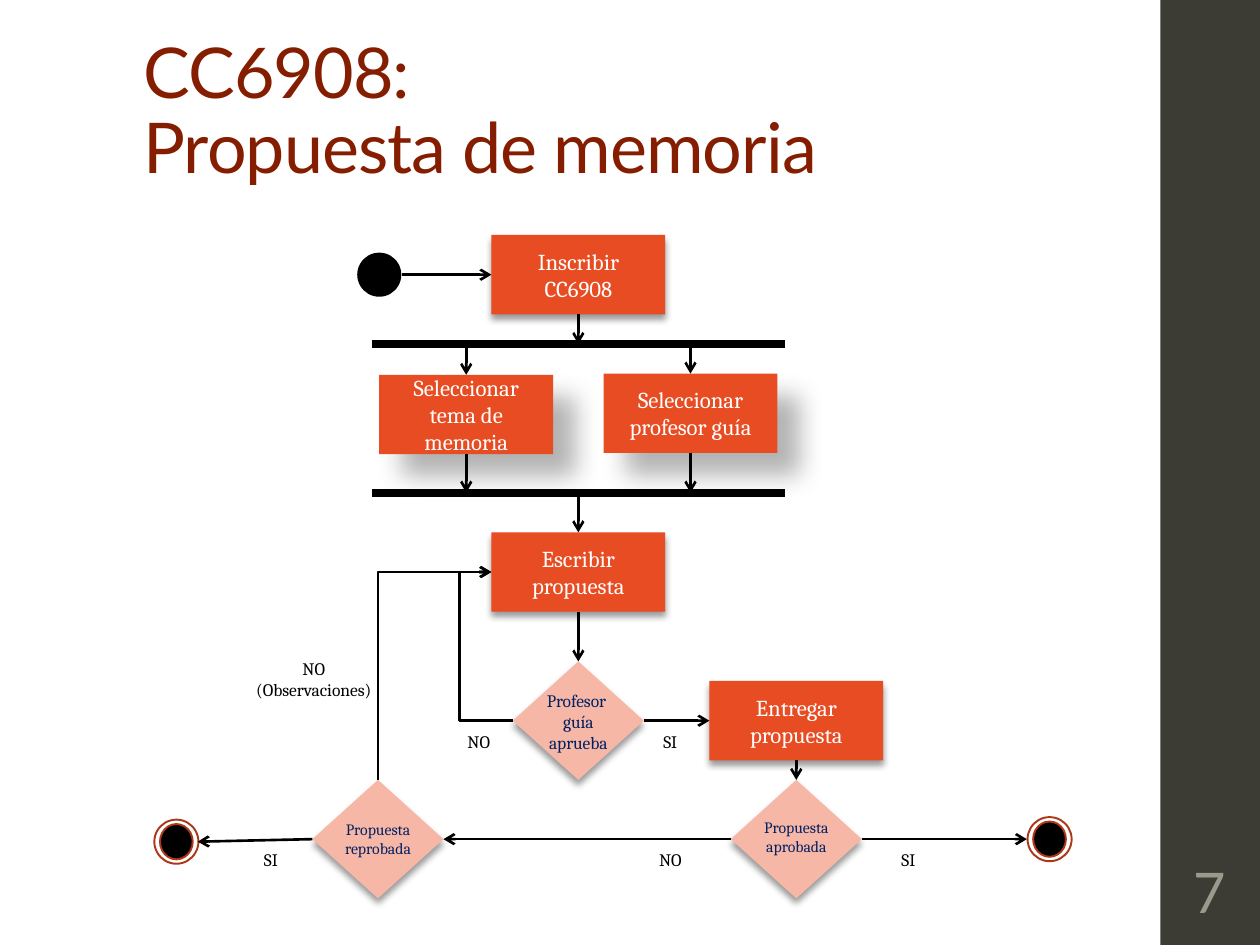
import pptx
import pptx.util
import pptx.dml.color
import pptx.enum.shapes
import pptx.enum.text
import pptx.oxml
import pptx.oxml.ns
from lxml import etree

Inches = pptx.util.Inches
Pt = pptx.util.Pt
qn = pptx.oxml.ns.qn
Kind = pptx.enum.shapes.MSO_SHAPE
Link = pptx.enum.shapes.MSO_CONNECTOR
Fit = pptx.enum.text.MSO_AUTO_SIZE
Mid = pptx.enum.text.MSO_ANCHOR.MIDDLE
Low = pptx.enum.text.MSO_ANCHOR.BOTTOM
Center = pptx.enum.text.PP_ALIGN.CENTER
Left = pptx.enum.text.PP_ALIGN.LEFT

COLORS = {
    "side": "3C3C34", "title": "851D00", "page": "9A9A8C",
    "task": "E84C22", "choice": "F6B7A7", "navy": "002060",
    "ring": "AC3819", "black": "000000", "white": "FFFFFF",
}
NEAR = (40, 4, 3, 90)
FAR = (30, 15, 18, 45)
TASK = (1.38, 0.63)
CHOICE = (1.04, 0.94)


def tint(name):
    return pptx.dml.color.RGBColor.from_string(COLORS[name])


def apply(item, values):
    for key, value in values.items():
        setattr(item, key, value)


def write(shape, text, size, color, font="Cambria", align=Center, frame=None, para=None):
    body = shape.text_frame
    apply(body, {"word_wrap": True, **(frame or {})})
    for num, line in enumerate(text if isinstance(text, list) else [text]):
        row = body.paragraphs[0] if num == 0 else body.add_paragraph()
        row.text = line
        apply(row, {"alignment": align, **(para or {})})
        for run in row.runs:
            apply(run.font, {"size": Pt(size), "name": font})
            run.font.color.rgb = tint(color)


def label(shapes, box, text, size, color="black", **style):
    area = shapes.add_textbox(*map(Inches, box))
    write(area, text, size, color, **{"frame": {"auto_size": Fit.SHAPE_TO_FIT_TEXT}, **style})
    return area


def shade(shape, cast):
    alpha, blur, dist, angle = cast
    effects = shape._element.spPr.find(qn("a:effectLst"))
    outer = etree.SubElement(
        effects, qn("a:outerShdw"), blurRad=str(Pt(blur)), dist=str(Pt(dist)),
        dir=str(angle * 60000), algn="ctr", rotWithShape="0")
    color = etree.SubElement(outer, qn("a:srgbClr"), val=COLORS["black"])
    etree.SubElement(color, qn("a:alpha"), val=str(alpha * 1000))


def draw(shapes, kind, box, fill, edge=None, cast=None):
    shape = shapes.add_shape(kind, *map(Inches, box))
    shape.shadow.inherit = False
    shape.fill.solid()
    shape.fill.fore_color.rgb = tint(fill)
    if edge:
        shape.line.color.rgb = tint(edge)
        shape.line.width = Pt(1.1)
    else:
        shape.line.fill.background()
    if cast:
        shade(shape, cast)
    return shape


def link(shapes, start, end, width=1.5, head=True, kind=Link.STRAIGHT):
    line = shapes.add_connector(kind, *map(Inches, (*start, *end)))
    line.line.color.rgb = tint("black")
    line.line.width = Pt(width)
    if head:
        etree.SubElement(line.line._get_or_add_ln(), qn("a:tailEnd"), type="arrow")
    etree.SubElement(line._element.spPr, qn("a:effectLst"))
    return line


def around(point, size):
    return (point[0] - size[0] / 2, point[1] - size[1] / 2, *size)


def task(shapes, point, text, cast=NEAR):
    shape = draw(shapes, Kind.RECTANGLE, around(point, TASK), "task", cast=cast)
    write(shape, text, 13, "white", frame={"vertical_anchor": Mid})


def choice(shapes, point, text, size, drop):
    box = around(point, CHOICE)
    draw(shapes, Kind.DIAMOND, box, "choice", cast=NEAR)
    label(shapes, (box[0] + 0.08, box[1] + drop, 0.88, 0.4), text, size, "navy")


def finish(shapes, point):
    parts = shapes.add_group_shape().shapes
    draw(parts, Kind.OVAL, around(point, (0.35, 0.35)), "white", "ring")
    draw(parts, Kind.OVAL, around(point, (0.26, 0.28)), "black", "ring")


def title(shapes, box):
    area = label(shapes, box, "CC6908: \nPropuesta de memoria", 40, "title", font="Lato", align=Left,
                 frame={"vertical_anchor": Low}, para={"line_spacing": 0.9})
    for run in area.text_frame.paragraphs[0].runs:
        run.font._element.set("spc", "-50")


def side(shapes, box):
    x, y, w, h = box
    draw(shapes, Kind.RECTANGLE, box, "side")
    frame = {"vertical_anchor": Mid, "margin_left": Inches(0.03), "margin_right": Inches(0.03)}
    label(shapes, (x + 0.02, y + h - 0.75, 0.75, 0.65), "7", 32, "page", font="Lato", frame=frame)


def flow(shapes, box):
    x, y, w, h = box

    def at(dx, dy):
        return x + dx, y + dy

    west, mid, east = 2.5, 3.39, 4.28
    back, send = 1.8, 5.12
    first, pick, draft, check, last = 0.38, 1.48, 2.74, 3.92, 4.86
    fork, join = 0.93, 2.11
    half, tall = TASK[0] / 2, TASK[1] / 2
    wide, high = CHOICE[0] / 2, CHOICE[1] / 2

    task(shapes, at(mid, first), "Inscribir CC6908")
    pair = shapes.add_group_shape().shapes
    task(pair, at(east, pick), "Seleccionar profesor guía", FAR)
    task(pair, at(west, pick + 0.01), "Seleccionar tema de memoria", FAR)
    for bar in (fork, join):
        link(shapes, at(mid - 1.64, bar), at(mid + 1.64, bar), 4.5, False)
    task(shapes, at(mid, draft), "Escribir propuesta")
    choice(shapes, at(mid, check), ["Profesor ", "guía", "aprueba"], 10, 0.18)
    task(shapes, at(send, check), "Entregar propuesta")
    choice(shapes, at(send, last), "Propuesta aprobada", 9, 0.25)
    choice(shapes, at(back, last), "Propuesta reprobada", 9, 0.27)
    draw(shapes, Kind.OVAL, around(at(1.81, first), (0.35, 0.35)), "black")
    finish(shapes, at(7.13, last))
    finish(shapes, at(0.2, last + 0.02))

    for col, top, end in (
            (mid, first + tall, fork), (west, fork, pick - tall + 0.01),
            (east, fork, pick - tall), (west, pick + tall + 0.01, join),
            (east, pick + tall, join), (mid, join, draft - tall),
            (mid, draft + tall, check - high), (send, check + tall, last - high)):
        link(shapes, at(col, top), at(col, end))
    for start, end, row, drop in (
            (1.99, mid - half, first, 0), (mid + wide, send - half, check, 0),
            (send - wide, back + wide, last, 0), (back - wide, 0.37, last, 0.02),
            (send + wide, 6.95, last, 0)):
        link(shapes, at(start, row), at(end, row + drop))

    retry = link(shapes, at(mid - wide, check), at(mid - half, draft), kind=Link.ELBOW)
    guide = retry._element.spPr.prstGeom.get_or_add_avLst()
    etree.SubElement(guide, qn("a:gd"), name="adj1", fmla="val 248300")

    rise, run = last - high - draft, mid - half - back
    cx, cy = back + run / 2, draft + rise / 2
    loop = link(shapes, at(cx + rise / 2, cy + run / 2), at(cx - rise / 2, cy - run / 2), kind=Link.ELBOW)
    loop._element.spPr.prstGeom.set("prst", "bentConnector2")
    loop._element.spPr.find(qn("a:xfrm")).set("rot", "5400000")

    for col, row, text in ((0.73, last, "SI"), (5.79, last, "SI"), (2.38, check, "NO"),
                           (3.9, last, "NO"), (3.9, check, "SI")):
        label(shapes, (*at(col, row + 0.03), 0.44, 0.27), text, 10)
    label(shapes, (*at(0.59, 3.37), 1.4, 0.44), "NO\n(Observaciones)", 10)


def main():
    deck = pptx.Presentation()
    apply(deck, {"slide_width": Inches(10), "slide_height": Inches(7.5)})
    shapes = deck.slides.add_slide(deck.slide_layouts[6]).shapes
    side(shapes, (9.21, 0, 0.79, 7.5))
    title(shapes, (1.04, 0.1, 7.95, 1.45))
    flow(shapes, (1.2, 1.8, 7.3, 5.33))
    deck.save("out.pptx")


if __name__ == "__main__":
    main()
